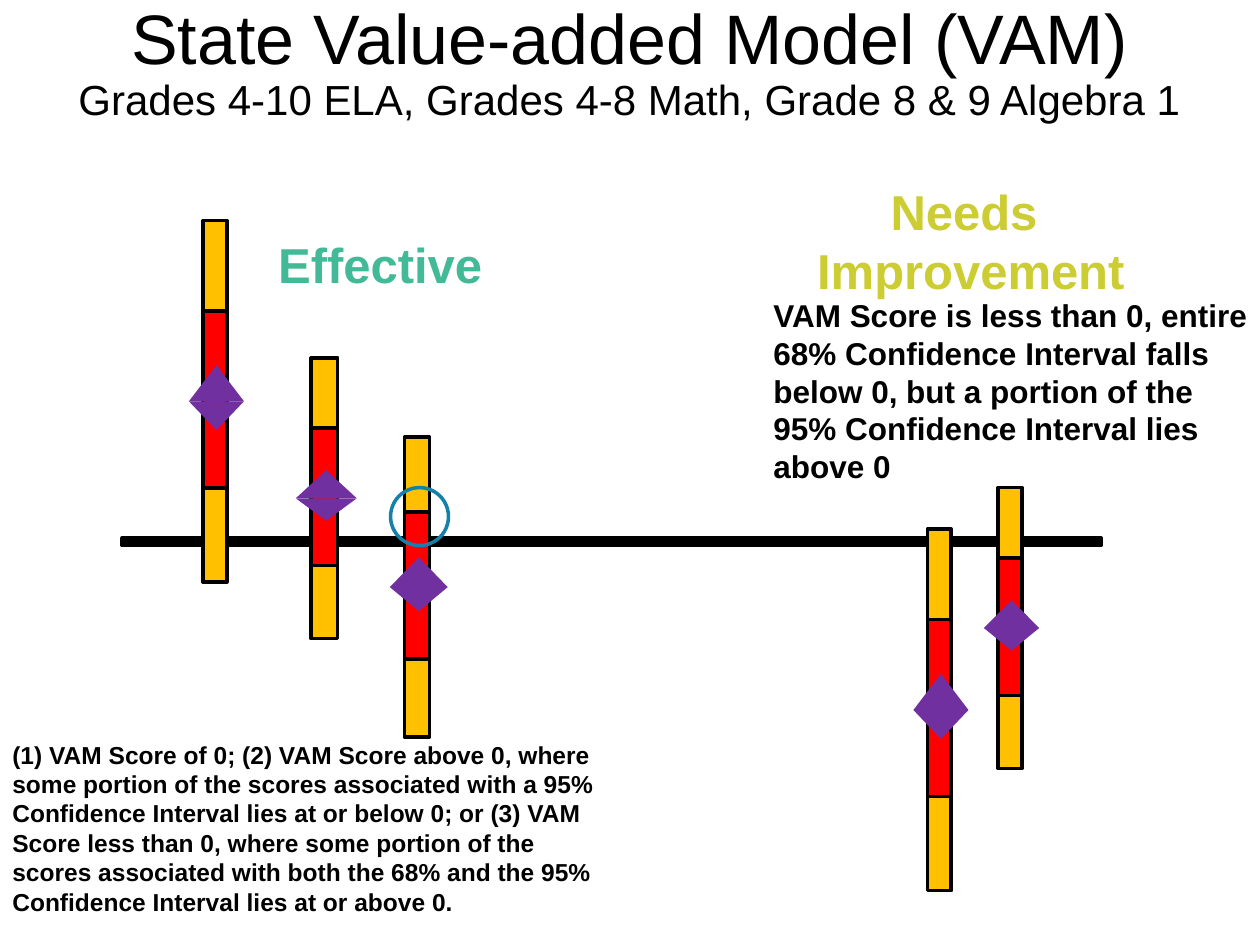
from pptx import Presentation
from pptx import util as u
from pptx.dml import color
from pptx.enum import shapes, text
from pptx.util import Inches

COLORS = {
    "black": "000000",
    "gold": "FFC000",
    "red": "FF0000",
    "purple": "7030A0",
    "lime": "CCCC33",
    "green": "42BA97",
    "blue": "1580A9",
}
KIND = shapes.MSO_SHAPE

deck = Presentation()
deck.slide_width, deck.slide_height = Inches(10), Inches(7.5)
page = deck.slides.add_slide(deck.slide_layouts[6])


def add_text(lines, left, top, width, height, sizes, hue="black", bold=True,
             align=text.PP_ALIGN.LEFT, wrap=True):
    """Add a text box with one paragraph per line, and return its frame."""
    box = page.shapes.add_textbox(*map(Inches, (left, top, width, height)))
    frame = box.text_frame
    frame.word_wrap = wrap
    for index, (line, size) in enumerate(zip(lines, sizes)):
        para = frame.paragraphs[0] if index == 0 else frame.add_paragraph()
        para.alignment = align
        span = para.add_run()
        span.text = line
        span.font.name = "Arial"
        span.font.size = u.Pt(size)
        span.font.bold = bold
        span.font.color.rgb = color.RGBColor.from_string(COLORS[hue])
    return frame


def add_figure(parent, kind, left, top, width, height, fill=None, line=None):
    """Add a preset shape with an optional fill and outline."""
    figure = parent.shapes.add_shape(
        kind, *map(Inches, (left, top, width, height)))
    figure.shadow.inherit = False
    if fill:
        figure.fill.solid()
        figure.fill.fore_color.rgb = color.RGBColor.from_string(COLORS[fill])
    else:
        figure.fill.background()
    if line:
        figure.line.color.rgb = color.RGBColor.from_string(COLORS[line])
        figure.line.width = u.Pt(2)
    else:
        figure.line.fill.background()


# Zero line
add_figure(page, KIND.RECTANGLE, 0.97, 4.27, 7.77, 0.06, "black", "black")

# Title, set high in its box
title = add_text(
    ["State Value-added Model (VAM)",
     "Grades 4-10 ELA, Grades 4-8 Math, Grade 8 & 9 Algebra 1"],
    -0.01, 0.21, 10.01, 1.25, sizes=(40, 24), bold=False,
    align=text.PP_ALIGN.CENTER)
title.vertical_anchor = text.MSO_ANCHOR.MIDDLE
title.margin_top, title.margin_bottom = 0, Inches(0.65)
for para in title.paragraphs:
    para.line_spacing = 0.9

# Right heading
add_text(["Needs ", "Improvement"], 6.37, 1.39, 2.67, 1.04, sizes=(28, 28),
         hue="lime", align=text.PP_ALIGN.CENTER, wrap=False)

# Score bars: 95% interval, 68% interval inside it, and the score marker
score_bars = [  # left, top, width, height
    (7.36, 4.20, 0.19, 2.87),
    (7.92, 3.87, 0.19, 2.23),
    (1.61, 1.75, 0.19, 2.87),
    (2.47, 2.84, 0.21, 2.23),
    (3.21, 3.47, 0.20, 2.38),
]
for left, top, width, height in score_bars:
    bar = page.shapes.add_group_shape()
    add_figure(bar, KIND.RECTANGLE, left, top, width, height, "gold", "black")
    add_figure(bar, KIND.RECTANGLE, left, top + 0.25 * height,
               width, 0.49 * height, "red", "black")
    marker_left, marker_width = left - 0.58 * width, 2.3 * width
    middle = top + 0.5 * height
    upper, lower = 0.1 * height, 0.08 * height
    add_figure(bar, KIND.FLOWCHART_EXTRACT, marker_left, middle - upper,
               marker_width, upper, "purple")
    add_figure(bar, KIND.FLOWCHART_MERGE, marker_left, middle,
               marker_width, lower, "purple")

# Left heading and the two definitions
add_text(["Effective"], 2.11, 1.81, 1.84, 0.57, sizes=(28,), hue="green",
         wrap=False)
add_text(["VAM Score is less than 0, entire 68% Confidence Interval falls "
          "below 0, but a portion of the 95% Confidence Interval lies above 0"],
         6.04, 2.3, 3.96, 1.62, sizes=(18,))
add_text(["(1) VAM Score of 0; (2) VAM Score above 0, where some portion of "
          "the scores associated with a 95% Confidence Interval lies at or "
          "below 0; or (3) VAM Score less than 0, where some portion of the "
          "scores associated with both the 68% and the 95% Confidence "
          "Interval lies at or above 0."],
         0, 5.82, 5, 1.51, sizes=(14,))

# Circle where the 68% interval crosses zero
add_figure(page, KIND.OVAL, 3.1, 3.87, 0.46, 0.46, line="blue")

deck.save("out.pptx")
